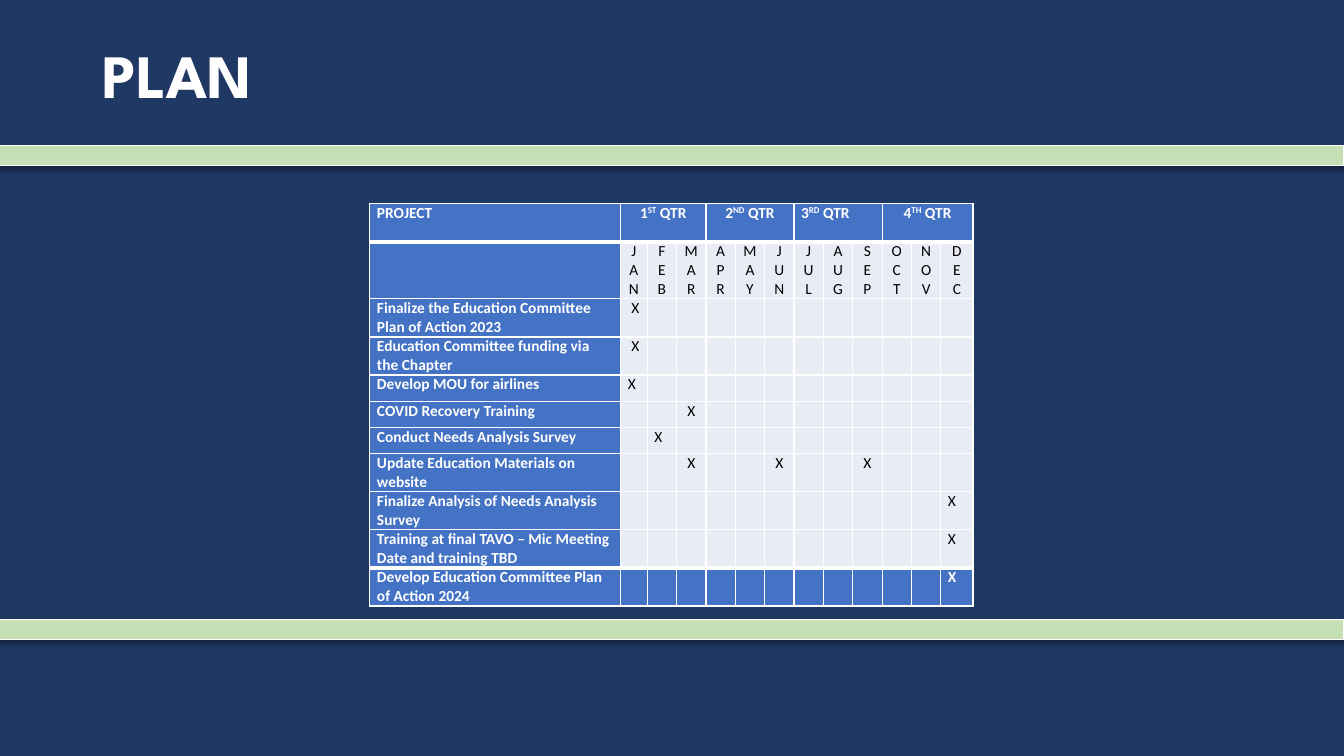
from lxml.etree import SubElement
from pptx import Presentation
from pptx.dml.color import RGBColor
from pptx.enum.shapes import MSO_SHAPE
from pptx.enum.text import MSO_ANCHOR, PP_ALIGN
from pptx.oxml.ns import qn
from pptx.util import Cm, Pt

NAVY, GREEN, BLUE, PALE = "203864", "C5E0B4", "4472C4", "E9EBF5"
WHITE, BLACK = "FFFFFF", "000000"
SLIDE_WIDTH, SLIDE_HEIGHT = Cm(33.87), Cm(19.05)
INSET, NUDGED_INSET = Cm(0.18), Cm(0.27)
THIN, THICK = Pt(1), Pt(3)

QUARTERS = [
    ("1", "ST", PP_ALIGN.CENTER),
    ("2", "ND", PP_ALIGN.CENTER),
    ("3", "RD", PP_ALIGN.LEFT),
    ("4", "TH", PP_ALIGN.CENTER),
]
MONTHS = "JAN FEB MAR APR MAY JUN JUL AUG SEP OCT NOV DEC".split()
PROJECTS = [
    ("Finalize the Education Committee Plan of Action 2023", ["JAN"]),
    ("Education Committee funding via the Chapter", ["JAN"]),
    ("Develop MOU for airlines", ["JAN"]),
    ("COVID Recovery Training", ["MAR"]),
    ("Conduct Needs Analysis Survey", ["FEB"]),
    ("Update Education Materials on website", ["MAR", "JUN", "SEP"]),
    ("Finalize Analysis of Needs Analysis Survey", ["DEC"]),
    ("Training at final TAVO – Mic Meeting Date and training TBD", ["DEC"]),
    ("Develop Education Committee Plan of Action 2024", ["DEC"]),
]
FLUSH_MARKS = {("Develop MOU for airlines", "JAN")}
NUDGED_MONTHS = {"JAN", "MAR", "JUN", "SEP"}
COLUMN_WIDTHS = [6.32, 0.67] + [0.74] * 10 + [0.81]
ROW_HEIGHTS = [0.96, 1.44] + [0.96] * 2 + [0.66] * 3 + [0.96] * 4
LAST_ROW = len(ROW_HEIGHTS) - 1


def color(hex_code):
    """Turn a hex string into a colour."""
    return RGBColor.from_string(hex_code)


def format_run(run, size, hex_code, bold, font_name="Calibri"):
    """Give a run its font."""
    run.font.name = font_name
    run.font.size = Pt(size)
    run.font.bold = bold
    run.font.color.rgb = color(hex_code)


def add_band(slide, top):
    """Draw a full-width green band with a soft shadow below it."""
    band = slide.shapes.add_shape(
        MSO_SHAPE.RECTANGLE, Cm(0), top, SLIDE_WIDTH, Cm(0.52))
    band.fill.solid()
    band.fill.fore_color.rgb = color(GREEN)
    band.line.color.rgb = color(WHITE)
    band.line.width = Pt(0.75)
    band.shadow.inherit = False
    effects = band.element.spPr.find(qn("a:effectLst"))
    shadow = SubElement(effects, qn("a:outerShdw"), blurRad=str(Pt(3.1)),
                        dist=str(Pt(1.8)), dir="5400000", rotWithShape="0")
    shade = SubElement(shadow, qn("a:srgbClr"), val=BLACK)
    SubElement(shade, qn("a:alpha"), val="35000")


def add_title(slide, text):
    """Write the slide title."""
    title = slide.shapes.add_textbox(Cm(2.33), Cm(0.15), Cm(29.21), Cm(3.68))
    frame = title.text_frame
    frame.word_wrap = True
    frame.vertical_anchor = MSO_ANCHOR.MIDDLE
    frame.text = text
    frame.paragraphs[0].line_spacing = 0.9
    format_run(frame.paragraphs[0].runs[0], 44, WHITE, True, "League Spartan")


def add_borders(cell, row):
    """Edge a cell in white, thicker below the header and above the last row."""
    top = THICK if row in (1, LAST_ROW) else THIN
    bottom = THICK if row in (0, LAST_ROW - 1) else THIN
    properties = cell._tc.get_or_add_tcPr()
    for side, width in (("L", THIN), ("R", THIN), ("T", top), ("B", bottom)):
        edge = SubElement(properties, qn(f"a:ln{side}"), w=str(width))
        fill = SubElement(edge, qn("a:solidFill"))
        SubElement(fill, qn("a:srgbClr"), val=WHITE)


def style_cell(cell, row, column):
    """Set the borders, fill, insets and empty text size of a cell."""
    add_borders(cell, row)
    cell.fill.solid()
    is_blue = column == 0 or row in (0, LAST_ROW)
    cell.fill.fore_color.rgb = color(BLUE if is_blue else PALE)
    cell.margin_left = cell.margin_right = INSET
    cell.margin_top = cell.margin_bottom = 0
    SubElement(cell.text_frame.paragraphs[0]._p, qn("a:endParaRPr"), sz="1100")


def write_cell(cell, text, hex_code=WHITE, bold=True, align=PP_ALIGN.LEFT):
    """Write text into a cell, one paragraph a line."""
    cell.text_frame.text = text
    for paragraph in cell.text_frame.paragraphs:
        paragraph.alignment = align
        for run in paragraph.runs:
            format_run(run, 11, hex_code, bold)


def write_quarter(cell, number, ordinal, align):
    """Write a quarter heading with a raised ordinal."""
    heading = cell.text_frame.paragraphs[0]
    heading.alignment = align
    for part in (number, ordinal, " QTR"):
        run = heading.add_run()
        run.text = part
        format_run(run, 11, WHITE, True)
        if part == ordinal:
            run._r.get_or_add_rPr().set("baseline", "30000")


def write_mark(cell, project, month, is_last):
    """Mark a project's month with an X."""
    write_cell(cell, "X", WHITE if is_last else BLACK, is_last)
    if month in NUDGED_MONTHS and (project, month) not in FLUSH_MARKS:
        cell.margin_left = NUDGED_INSET
        cell.margin_right = Cm(0.1)


def add_schedule(slide):
    """Build the table of projects by month."""
    schedule = slide.shapes.add_table(
        len(ROW_HEIGHTS), len(COLUMN_WIDTHS), Cm(9.32), Cm(5.13),
        Cm(sum(COLUMN_WIDTHS)), Cm(sum(ROW_HEIGHTS))).table
    for column, width in zip(schedule.columns, COLUMN_WIDTHS):
        column.width = Cm(width)
    for row, height in zip(schedule.rows, ROW_HEIGHTS):
        row.height = Cm(height)
    for row in range(len(ROW_HEIGHTS)):
        for column in range(len(COLUMN_WIDTHS)):
            style_cell(schedule.cell(row, column), row, column)

    write_cell(schedule.cell(0, 0), "PROJECT")
    for index, (number, ordinal, align) in enumerate(QUARTERS):
        first = 1 + 3 * index
        quarter = schedule.cell(0, first)
        quarter.merge(schedule.cell(0, first + 2))
        write_quarter(quarter, number, ordinal, align)
    for column, month in enumerate(MONTHS, 1):
        write_cell(schedule.cell(1, column), "\n".join(month), BLACK, False,
                   PP_ALIGN.CENTER)
    for row, (project, months) in enumerate(PROJECTS, 2):
        write_cell(schedule.cell(row, 0), project)
        for month in months:
            mark = schedule.cell(row, 1 + MONTHS.index(month))
            write_mark(mark, project, month, row == LAST_ROW)


def main():
    """Build the plan slide and save it."""
    presentation = Presentation()
    presentation.slide_width = SLIDE_WIDTH
    presentation.slide_height = SLIDE_HEIGHT
    slide = presentation.slides.add_slide(presentation.slide_layouts[6])
    slide.background.fill.solid()
    slide.background.fill.fore_color.rgb = color(NAVY)
    for top in (Cm(3.66), Cm(15.6)):
        add_band(slide, top)
    add_title(slide, "PLAN")
    add_schedule(slide)
    presentation.save("out.pptx")


if __name__ == "__main__":
    main()
